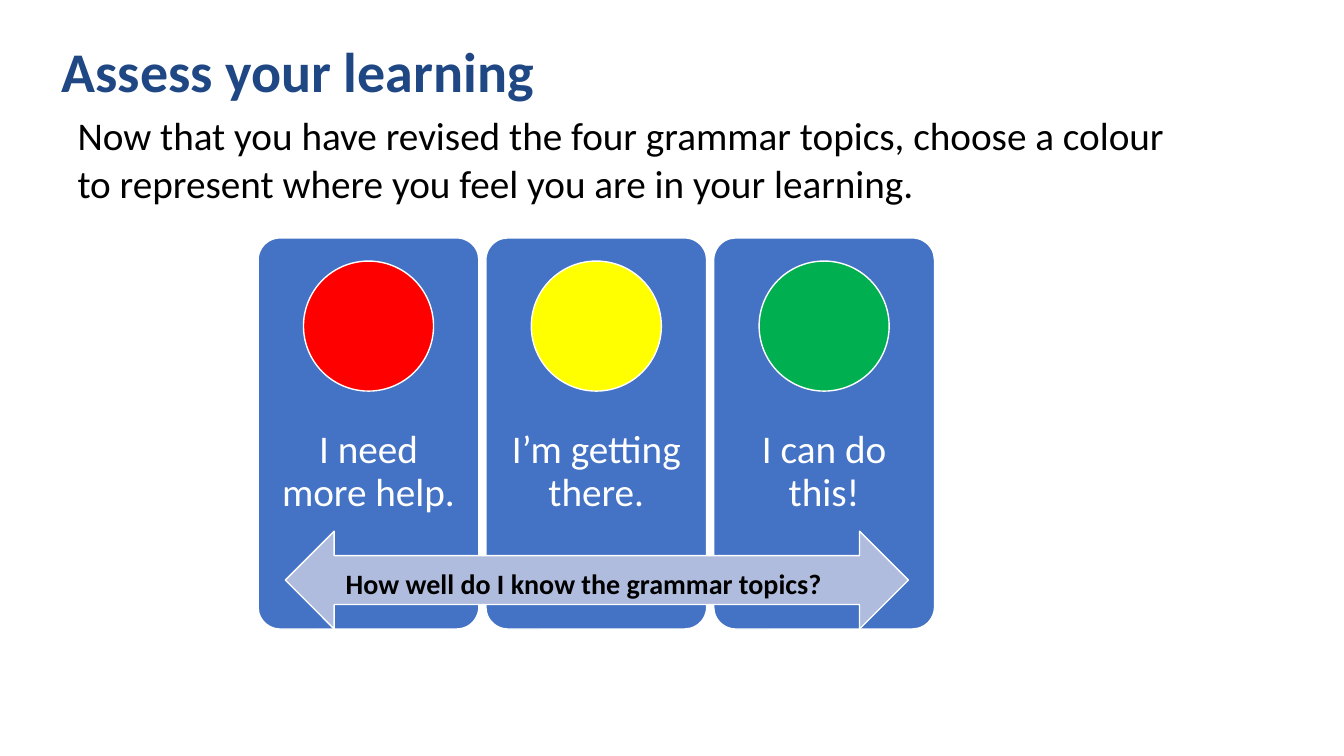
from dataclasses import dataclass

from pptx import Presentation, util as u
from pptx.dml.color import RGBColor
from pptx.enum import shapes, text


@dataclass(frozen=True)
class Theme:
    font: str = "Calibri"
    navy: str = "1E4783"
    black: str = "000000"
    white: str = "FFFFFF"
    blue: str = "4472C4"
    pale: str = "B0BCDE"
    red: str = "FF0000"
    yellow: str = "FFFF00"
    green: str = "00B050"
    head: int = 40
    body: int = 28
    small: int = 20


class Deck:
    def __init__(self, theme):
        self.theme = theme
        self.prs = Presentation()
        self.prs.slide_width = u.Inches(13.33)
        self.prs.slide_height = u.Inches(7.5)
        self.slide = self.prs.slides.add_slide(self.prs.slide_layouts[5])

    def place(self, x, y, w, h):
        wide, high = self.prs.slide_width, self.prs.slide_height
        return [int(share * full / 100)
                for share, full in zip((x, y, w, h), (wide, high, wide, high))]

    def style(self, frame, words, size, color, bold=False,
              align=text.PP_ALIGN.LEFT, gap=1.0):
        frame.text = words
        para = frame.paragraphs[0]
        para.alignment = align
        para.line_spacing = gap
        font = para.font
        font.name, font.size, font.bold = self.theme.font, u.Pt(size), bold
        font.color.rgb = RGBColor.from_string(color)

    def title(self, box, words):
        shape = self.slide.shapes.title
        shape.left, shape.top, shape.width, shape.height = self.place(*box)
        frame = shape.text_frame
        frame.auto_size = text.MSO_AUTO_SIZE.NONE
        frame.vertical_anchor = text.MSO_ANCHOR.MIDDLE
        self.style(frame, words, self.theme.head, self.theme.navy, True, gap=0.9)

    def label(self, box, words, size, color, wrap=True, **looks):
        frame = self.slide.shapes.add_textbox(*self.place(*box)).text_frame
        frame.word_wrap = wrap
        self.style(frame, words, size, color, **looks)
        return frame

    def shape(self, kind, box, fill):
        shape = self.slide.shapes.add_shape(kind, *self.place(*box))
        shape.shadow.inherit = False
        shape.fill.solid()
        shape.fill.fore_color.rgb = RGBColor.from_string(fill)
        shape.line.color.rgb = RGBColor.from_string(self.theme.white)
        shape.line.width = u.Pt(1)
        return shape

    def card(self, x, words, light):
        kinds, wide = shapes.MSO_SHAPE, 16.43
        panel = self.shape(kinds.ROUNDED_RECTANGLE, (x, 31.47, wide, 51.73),
                           self.theme.blue)
        panel.adjustments[0] = 0.1
        frame = self.label((x, 52.13, wide, 20.67), words, self.theme.body,
                           self.theme.white, align=text.PP_ALIGN.CENTER, gap=0.9)
        frame.vertical_anchor = text.MSO_ANCHOR.MIDDLE
        frame.margin_left = frame.margin_right = u.Inches(0.22)
        frame.margin_top = frame.margin_bottom = u.Inches(0.22)
        self.shape(kinds.OVAL, (x + 3.38, 34.53, 9.68, 17.2), light)


def main():
    theme = Theme()
    deck = Deck(theme)
    deck.title((3.83, 5.33, 86.27, 9.07), "Assess your learning")
    deck.label((5.03, 14.13, 84, 13.87),
               "Now that you have revised the four grammar topics, choose a "
               "colour to represent where you feel you are in your learning.",
               theme.body, theme.black)
    cards = (("I need more help.", theme.red),
             ("I’m getting there.", theme.yellow),
             ("I can do this!", theme.green))
    for col, (words, light) in enumerate(cards):
        deck.card(19.2 + 16.95 * col, words, light)
    deck.shape(shapes.MSO_SHAPE.LEFT_RIGHT_ARROW,
               (21.23, 70.27, 46.36, 12.93), theme.pale)
    deck.label((24.98, 74.27, 37.2, 5.87),
               "How well do I know the grammar topics?",
               theme.small, theme.black, wrap=False, bold=True)
    deck.prs.save("out.pptx")


if __name__ == "__main__":
    main()
